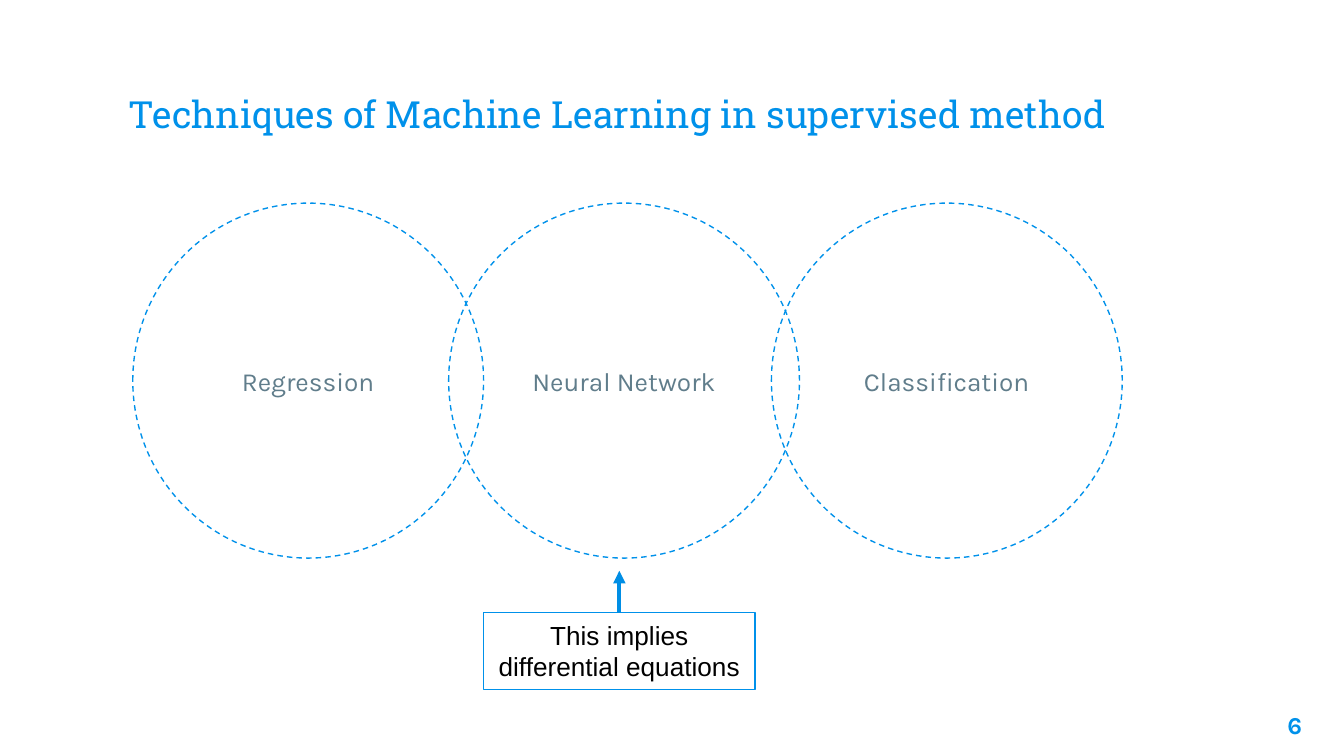
"""Build a slide showing three overlapping supervised learning techniques."""
from lxml import etree
from pptx import Presentation
from pptx.dml.color import RGBColor
from pptx.enum.dml import MSO_LINE
from pptx.enum.shapes import MSO_CONNECTOR, MSO_SHAPE
from pptx.enum.text import MSO_ANCHOR, PP_ALIGN
from pptx.oxml.ns import qn
from pptx.util import Cm, Pt

DASH = MSO_LINE.DASH
OVAL, RECT = MSO_SHAPE.OVAL, MSO_SHAPE.RECTANGLE
TOP, MIDDLE, BOTTOM = MSO_ANCHOR.TOP, MSO_ANCHOR.MIDDLE, MSO_ANCHOR.BOTTOM
LEFT, CENTER, RIGHT = PP_ALIGN.LEFT, PP_ALIGN.CENTER, PP_ALIGN.RIGHT

BLUE, ARROW_BLUE, GREY, BLACK = "0091EA", "008EE5", "607D8B", "000000"
TITLE = "Techniques of Machine Learning in supervised method"
TECHNIQUES = [("Neural Network", 8.48), ("Regression", 2.51), ("Classification", 14.58)]
NOTE = "This implies differential equations"
PAGE = "6"

CIRCLE_TOP, CIRCLE_W, CIRCLE_H = 3.84, 6.63, 6.71
NOTE_BOX = (9.14, 11.58, 5.13, 1.45)
ARROW_LENGTH = 0.79


def color(value):
    return RGBColor.from_string(value)


def write(sp, text, font, size, ink, align=CENTER, anchor=MIDDLE, inset=0.25, bold=False):
    tf = sp.text_frame
    tf.word_wrap = True
    tf.vertical_anchor = anchor
    tf.margin_left = tf.margin_right = Cm(0.25)
    tf.margin_top = tf.margin_bottom = Cm(inset)
    p = tf.paragraphs[0]
    p.alignment = align
    r = p.add_run()
    r.text = text
    r.font.name, r.font.size, r.font.bold = font, Pt(size), bold
    r.font.color.rgb = color(ink)


def add_label(s, box, *args, **kwargs):
    write(s.shapes.add_textbox(*map(Cm, box)), *args, **kwargs)


def add_outline(s, kind, box, dash=None):
    sp = s.shapes.add_shape(kind, *map(Cm, box))
    sp.shadow.inherit = False
    sp.fill.background()
    sp.line.color.rgb = color(BLUE)
    sp.line.width = Pt(0.75)
    sp.line.dash_style = dash
    return sp


def add_arrow(s, x, y, length):
    cxn = s.shapes.add_connector(MSO_CONNECTOR.STRAIGHT, Cm(x), Cm(y), Cm(x), Cm(y - length))
    cxn.line.color.rgb = color(ARROW_BLUE)
    cxn.line.width = Pt(2.25)
    etree.SubElement(cxn.line._get_or_add_ln(), qn("a:tailEnd"), type="triangle")
    etree.SubElement(cxn._element.spPr, qn("a:effectLst"))


def main():
    prs = Presentation()
    prs.slide_width, prs.slide_height = Cm(25.4), Cm(14.29)
    s = prs.slides.add_slide(prs.slide_layouts[6])

    add_label(s, (2.18, 0.86, 21.03, 1.96), TITLE, "Roboto Slab", 20, BLUE, LEFT, BOTTOM)
    for name, left in TECHNIQUES:
        sp = add_outline(s, OVAL, (left, CIRCLE_TOP, CIRCLE_W, CIRCLE_H), DASH)
        write(sp, name, "Karla", 14, GREY)
    add_label(s, (23.34, 13.18, 1.52, 1.09), PAGE, "Karla", 13, BLUE, RIGHT, TOP, bold=True)

    sp = add_outline(s, RECT, NOTE_BOX)
    write(sp, NOTE, "Arial", 14, BLACK, anchor=TOP, inset=0.13)
    left, top, width, _ = NOTE_BOX
    add_arrow(s, left + width / 2, top, ARROW_LENGTH)

    prs.save("out.pptx")


if __name__ == "__main__":
    main()
